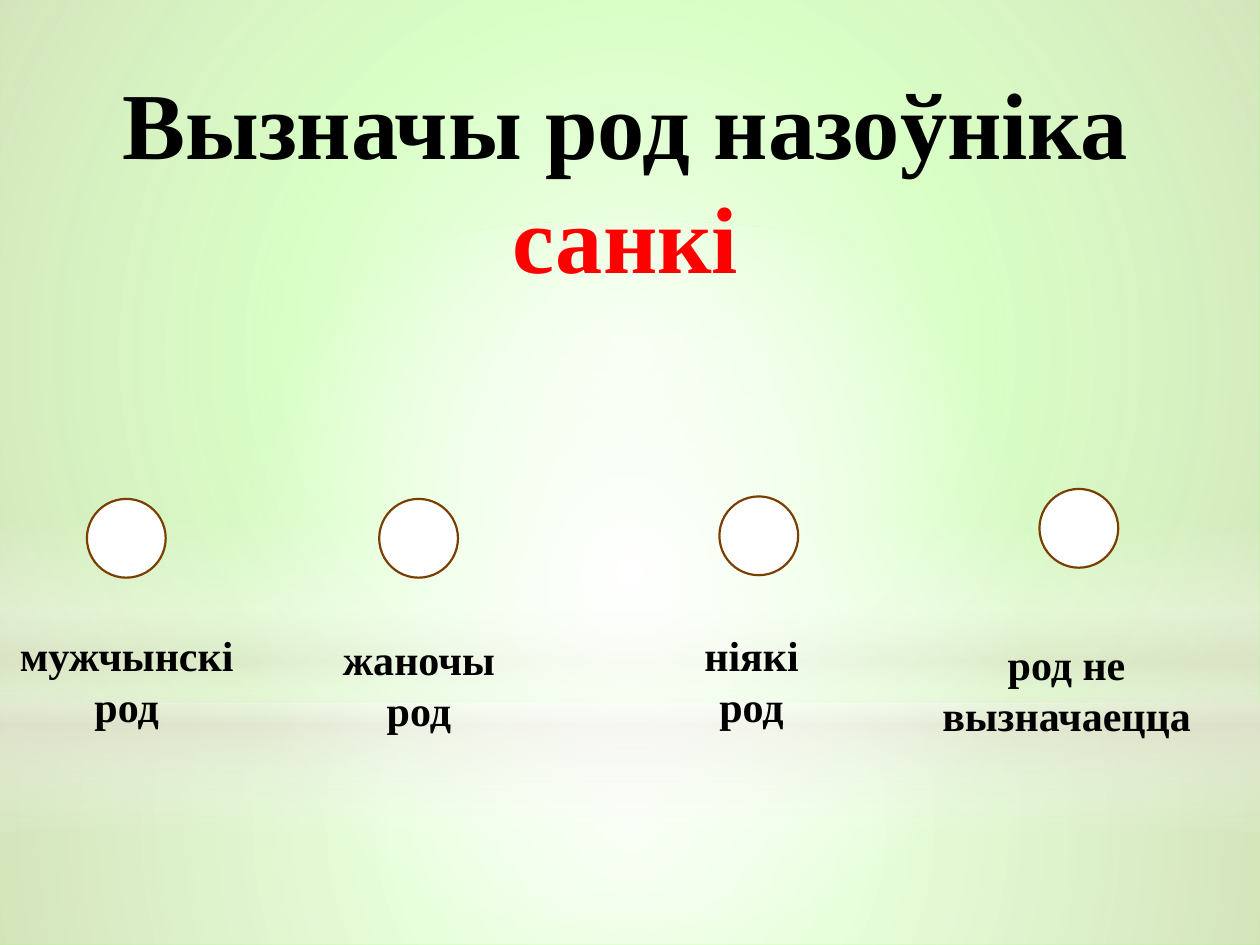
from dataclasses import dataclass

from pptx import Presentation
from pptx.dml.color import RGBColor
from pptx.enum.shapes import MSO_SHAPE
from pptx.enum.text import MSO_ANCHOR, MSO_AUTO_SIZE, PP_ALIGN
from pptx.oxml import parse_xml
from pptx.oxml.ns import nsdecls, qn
from pptx.util import Pt


@dataclass(frozen=True)
class Theme:
    font: str = "Times New Roman"
    backdrop: str = "99FF66"
    glow: str = "FFFFFF"
    haze: str = "E3DED1"
    ink: str = "000000"
    accent: str = "FF0000"
    circle_fill: str = "FFFFFF"
    circle_line: str = "7A3E00"
    title_size: float = 54
    label_size: float = 24
    line_width: float = 1.25


THEME = Theme()
WIDTH, HEIGHT = 720, 540
HORIZON = 401.8
CIRCLE_SIZE = 45
LABEL_HEIGHT = 65.5

RADIAL = (
    '<a:path path="circle">'
    '<a:fillToRect l="50000" t="50000" r="50000" b="50000"/></a:path>'
)
VERTICAL = '<a:lin ang="5400000" scaled="0"/>'

GLOWS = [
    (MSO_SHAPE.RECTANGLE, HORIZON, HEIGHT - HORIZON, RADIAL,
     [(0, THEME.glow, 91), (37, THEME.glow, 76), (100, THEME.haze, 79)]),
    (MSO_SHAPE.RECTANGLE, 0, HORIZON, RADIAL,
     [(0, THEME.glow, 89), (48, THEME.glow, 62), (100, THEME.haze, 79)]),
    (MSO_SHAPE.RECTANGLE, 296.6, 180, VERTICAL,
     [(0, THEME.glow, 0), (29, THEME.glow, 30), (45, THEME.haze, 40),
      (55, THEME.glow, 26), (65, THEME.haze, 60), (100, THEME.glow, 0)]),
    (MSO_SHAPE.OVAL, 126, HORIZON, RADIAL,
     [(0, THEME.glow, 100), (56, THEME.glow, 0)]),
]

ANSWERS = [
    ((49.7, 285.1), (0, 356.4, 144.7), ["мужчынскі род"]),
    ((216.7, 285.1), (167, 358.6, 144.7), ["жаночы", "род"]),
    ((411.1, 283.7), (357.1, 356.4, 144.7), ["ніякі", "род"]),
    ((594, 279.4), (529.9, 361.4, 159.1), ["род не вызначаецца"]),
]


def gradient_fill(stops, direction):
    stop_list = "".join(
        f'<a:gs pos="{position * 1000}"><a:srgbClr val="{color}">'
        f'<a:alpha val="{opacity * 1000}"/></a:srgbClr></a:gs>'
        for position, color, opacity in stops
    )
    return parse_xml(
        f'<a:gradFill {nsdecls("a")} rotWithShape="1">'
        f"<a:gsLst>{stop_list}</a:gsLst>{direction}</a:gradFill>"
    )


def add_glow(slide, layer, geometry, top, height, direction, stops):
    glow = slide.shapes.add_shape(geometry, 0, Pt(top), Pt(WIDTH), Pt(height))
    glow.shadow.inherit = False
    glow.line.fill.background()
    glow.fill.background()
    properties = glow.element.spPr
    properties.replace(
        properties.find(qn("a:noFill")), gradient_fill(stops, direction)
    )
    slide.slide_layout.shapes.element.insert(2 + layer, glow.element)


def write_lines(frame, lines, size):
    frame.word_wrap = True
    frame.auto_size = MSO_AUTO_SIZE.SHAPE_TO_FIT_TEXT
    frame.vertical_anchor = MSO_ANCHOR.TOP
    for index, (text, color) in enumerate(lines):
        paragraph = frame.add_paragraph() if index else frame.paragraphs[0]
        paragraph.alignment = PP_ALIGN.CENTER
        run = paragraph.add_run()
        run.text = text
        run.font.name = THEME.font
        run.font.size = Pt(size)
        run.font.bold = True
        run.font.color.rgb = RGBColor.from_string(color)


def format_title(slide):
    title = slide.shapes.title
    title.left, title.top = Pt(20.2), Pt(33.8)
    title.width, title.height = Pt(674.6), Pt(203.8)
    question = [("Вызначы род назоўніка", THEME.ink), ("санкі", THEME.accent)]
    write_lines(title.text_frame, question, THEME.title_size)


def add_circle(slide, left, top):
    circle = slide.shapes.add_shape(
        MSO_SHAPE.OVAL, Pt(left), Pt(top), Pt(CIRCLE_SIZE), Pt(CIRCLE_SIZE)
    )
    circle.shadow.inherit = False
    circle.fill.solid()
    circle.fill.fore_color.rgb = RGBColor.from_string(THEME.circle_fill)
    circle.line.color.rgb = RGBColor.from_string(THEME.circle_line)
    circle.line.width = Pt(THEME.line_width)


def add_label(slide, left, top, width, lines):
    label = slide.shapes.add_textbox(
        Pt(left), Pt(top), Pt(width), Pt(LABEL_HEIGHT)
    )
    write_lines(
        label.text_frame, [(line, THEME.ink) for line in lines], THEME.label_size
    )


def main():
    presentation = Presentation()
    presentation.slide_width, presentation.slide_height = Pt(WIDTH), Pt(HEIGHT)
    slide = presentation.slides.add_slide(presentation.slide_layouts[5])
    slide.background.fill.solid()
    slide.background.fill.fore_color.rgb = RGBColor.from_string(THEME.backdrop)
    for layer, glow in enumerate(GLOWS):
        add_glow(slide, layer, *glow)
    format_title(slide)
    for circle_place, _, _ in ANSWERS:
        add_circle(slide, *circle_place)
    for _, label_place, lines in ANSWERS:
        add_label(slide, *label_place, lines)
    presentation.save("out.pptx")


if __name__ == "__main__":
    main()
